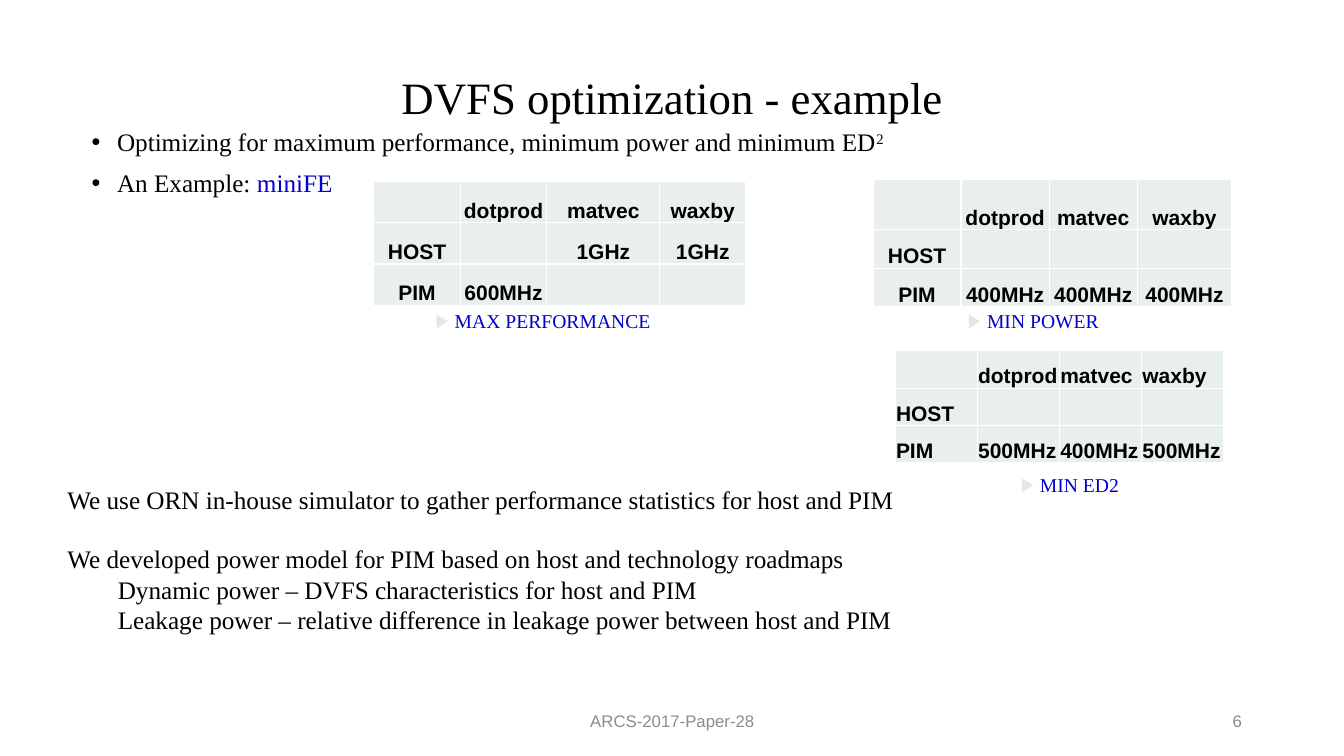
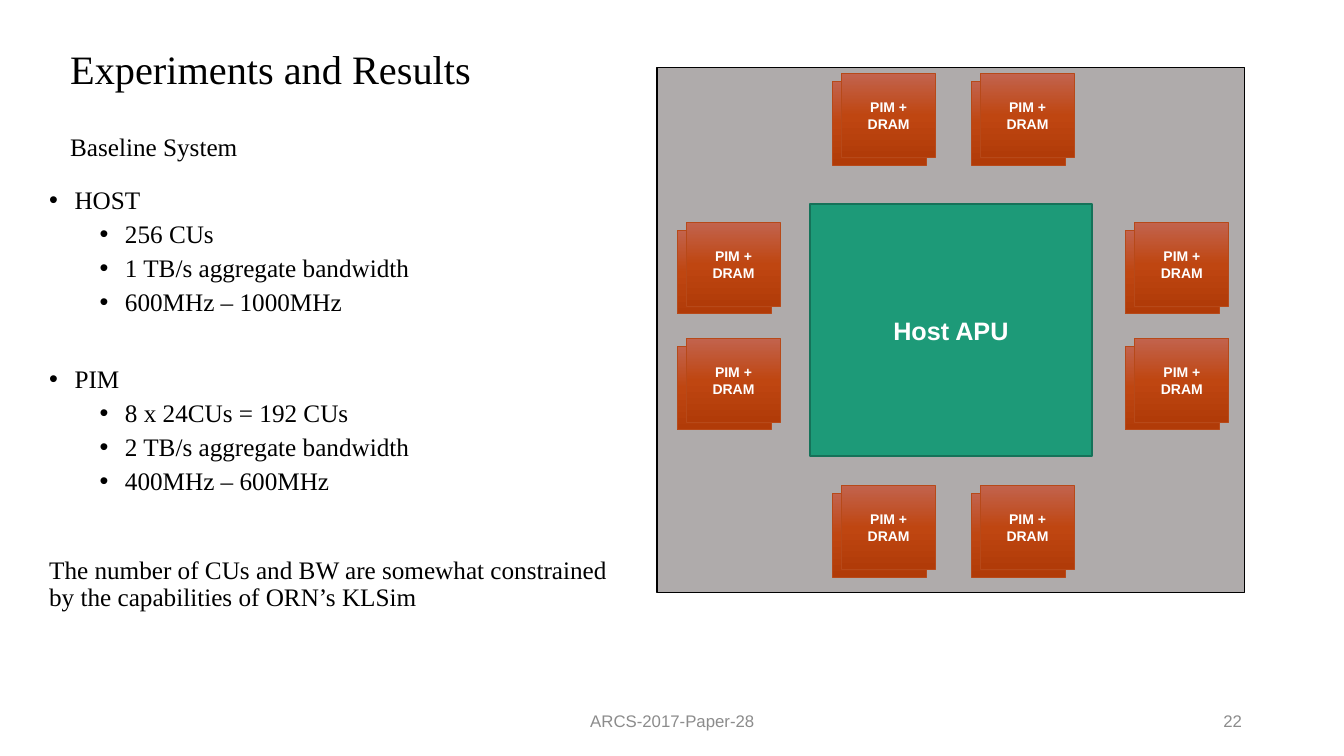
from itertools import product

from pptx import Presentation
from pptx.dml.color import RGBColor
from pptx.enum.shapes import MSO_SHAPE as Shape
from pptx.enum.text import MSO_ANCHOR as Anchor, PP_ALIGN as Align
from pptx.oxml import parse_xml
from pptx.oxml.ns import nsdecls, qn
from pptx.util import Cm, Pt

# Shared look
SERIF, SANS = "Times New Roman", "Arial"
BLACK, WHITE, BLUE, GREY = "000000", "FFFFFF", "0000CC", "8C8C8C"
CELL_FILL, CAPTION_BULLET = "E8EFEC", "E7E6E6"
BOARD_FILL, HOST_FILL, HOST_LINE = "AFABAB", "1D9A78", "157259"
PIM_STOPS, PIM_LINE = [(0, "C2634D"), (50, "BF4611"), (100, "B13B08")], "B74919"
FOOTER = "ARCS-2017-Paper-28"

# Paragraph styles; left and hang are in cm
STYLES = {
    "title": dict(size=32, align=Align.CENTER, line=0.9),
    "left title": dict(size=28.8, line=0.9),
    "subtitle": dict(line=0.9, before=30),
    "bullet": dict(left=0.64, hang=0.64, bullet="•", line=0.9, before=10),
    "next bullet": dict(left=0.64, hang=0.64, bullet="•", line=0.9, before=35),
    "sub-bullet": dict(left=1.91, hang=0.64, bullet="•", line=0.9, before=5),
    "remark": dict(line=0.9, before=44),
    "note": dict(),
    "next note": dict(before=21),
    "indented note": dict(left=1.27),
    "caption": dict(size=14, color=BLUE, align=Align.CENTER, left=0.48, hang=0.48,
                    bullet="▶", bullet_color=CAPTION_BULLET, after=6),
    "footer": dict(size=12, face=SANS, color=GREY, align=Align.CENTER),
    "number": dict(size=12, face=SANS, color=GREY, align=Align.RIGHT),
    "cell": dict(size=15, face=SANS, bold=True),
    "centred cell": dict(size=15, face=SANS, bold=True, align=Align.CENTER),
    "host": dict(face=SANS, color=WHITE, bold=True, align=Align.CENTER),
    "pim": dict(size=10, face=SANS, color=WHITE, bold=True, align=Align.CENTER),
}

# Slide 1 content; a text may be a list of (text, run options)
DVFS_TITLE = [("title", "DVFS optimization - example")]
DVFS_BODY = [
    ("bullet", [("Optimizing for maximum performance, minimum power and minimum ED", {}),
                ("2", {"raised": True})]),
    ("bullet", [("An Example: ", {}), ("miniFE", {"color": BLUE})]),
]
DVFS_NOTES = [
    ("note", "We use ORN in-house simulator to gather performance statistics for host and PIM"),
    ("next note", "We developed power model for PIM based on host and technology roadmaps"),
    ("indented note", "Dynamic power – DVFS characteristics for host and PIM"),
    ("indented note", "Leakage power – relative difference in leakage power between host and PIM"),
]
KERNELS = ["", "dotprod", "matvec", "waxby"]
FREQUENCY_TABLES = [
    dict(at=(9.42, 4.57), columns=[2.18, 2.18, 2.85, 2.16], rows=[1.04] * 3,
         style="centred cell", host=["", "1GHz", "1GHz"], pim=["600MHz", "", ""],
         caption="MAX PERFORMANCE", caption_box=(9.7, 7.65, 7.98, 0.86)),
    dict(at=(22, 4.52), columns=[2.22, 2.22, 2.22, 2.38], rows=[1.27, 0.97, 0.97],
         style="centred cell", host=[""] * 3, pim=["400MHz"] * 3,
         caption="MIN POWER", caption_box=(22.78, 7.65, 6.53, 0.86)),
    dict(at=(22.56, 8.84), columns=[2.07] * 4, rows=[0.94] * 3,
         style="cell", host=[""] * 3, pim=["500MHz", "400MHz", "500MHz"],
         caption="MIN ED2", caption_box=(23.7, 11.79, 6.53, 0.86)),
]

# Slide 2 content
SYSTEM_TITLE = [("left title", "Experiments and Results"), ("subtitle", "Baseline System")]
SYSTEM_BODY = [
    ("bullet", "HOST"),
    ("sub-bullet", "256 CUs"),
    ("sub-bullet", "1 TB/s aggregate bandwidth"),
    ("sub-bullet", "600MHz – 1000MHz"),
    ("next bullet", "PIM"),
    ("sub-bullet", "8 x 24CUs = 192 CUs"),
    ("sub-bullet", "2 TB/s aggregate bandwidth"),
    ("sub-bullet", "400MHz – 600MHz"),
    ("remark", "The number of CUs and BW are somewhat constrained "
               "by the capabilities of ORN’s KLSim"),
]
PIM_TEXT = [("pim", "PIM +"), ("pim", "DRAM")]
BOARD = (16.56, 1.7, 14.81, 13.23)
HOST_SIZE, PIM_SIZE = (7.11, 6.35), (2.37, 2.11)
PIM_SPOTS = [*product((21.21, 24.71), (1.86, 12.24)),   # above and below the host
             *product((17.3, 28.6), (5.61, 8.53))]      # left and right of the host
STACK_SHIFT = (-0.24, 0.19)


def rgb(value):
    return RGBColor.from_string(value)


def color_xml(value):
    return f'<a:solidFill {nsdecls("a")}><a:srgbClr val="{value}"/></a:solidFill>'


def set_bullet(properties, left, hang, bullet, bullet_color):
    properties.set("marL", str(Cm(left)))
    properties.set("indent", str(-Cm(hang)))
    if bullet:
        if bullet_color:
            properties.append(parse_xml(
                f'<a:buClr {nsdecls("a")}><a:srgbClr val="{bullet_color}"/></a:buClr>'))
        properties.append(parse_xml(f'<a:buFont {nsdecls("a")} typeface="{SANS}"/>'))
        properties.append(parse_xml(f'<a:buChar {nsdecls("a")} char="{bullet}"/>'))


def format_paragraph(paragraph, size=18, face=SERIF, color=BLACK, bold=False,
                     align=Align.LEFT, line=None, before=0, after=0,
                     left=0, hang=0, bullet=None, bullet_color=None):
    set_bullet(paragraph._p.get_or_add_pPr(), left, hang, bullet, bullet_color)
    paragraph.alignment = align
    paragraph.line_spacing = line
    paragraph.space_before, paragraph.space_after = Pt(before), Pt(after)
    font = paragraph.font
    font.size, font.name, font.bold = Pt(size), face, bold
    font.color.rgb = rgb(color)


def write(frame, paragraphs, anchor=Anchor.TOP):
    frame.word_wrap = True
    frame.vertical_anchor = anchor
    for index, (style, text) in enumerate(paragraphs):
        paragraph = frame.add_paragraph() if index else frame.paragraphs[0]
        format_paragraph(paragraph, **STYLES[style])
        for words, options in [(text, {})] if isinstance(text, str) else text:
            run = paragraph.add_run()
            run.text = words
            if "color" in options:
                run.font.color.rgb = rgb(options["color"])
            if options.get("raised"):
                run._r.get_or_add_rPr().set("baseline", "30000")


def add_text(slide, box, paragraphs, anchor=Anchor.TOP):
    shape = slide.shapes.add_textbox(*map(Cm, box))
    write(shape.text_frame, paragraphs, anchor)


def add_page(presentation, number):
    slide = presentation.slides.add_slide(presentation.slide_layouts[6])
    add_text(slide, (11.23, 17.65, 11.43, 1.02), [("footer", FOOTER)], Anchor.MIDDLE)
    add_text(slide, (23.93, 17.65, 7.62, 1.02), [("number", str(number))], Anchor.MIDDLE)
    return slide


def format_cell(cell, text, style):
    cell.fill.solid()
    cell.fill.fore_color.rgb = rgb(CELL_FILL)
    cell.margin_left = cell.margin_right = cell.margin_top = Cm(0.02)
    cell.margin_bottom = 0
    cell.vertical_anchor = Anchor.BOTTOM
    paragraph = cell.text_frame.paragraphs[0]
    if text:
        paragraph.add_run().text = text
    format_paragraph(paragraph, **STYLES[style])
    for index, side in enumerate(("lnL", "lnR", "lnT", "lnB")):
        cell._tc.get_or_add_tcPr().insert(index, parse_xml(
            f'<a:{side} {nsdecls("a")} w="{Pt(1)}">{color_xml(WHITE)}</a:{side}>'))


def add_frequency_table(slide, at, columns, rows, style, host, pim, caption, caption_box):
    size = (sum(columns), sum(rows))
    table = slide.shapes.add_table(len(rows), len(columns), *map(Cm, at + size)).table
    table.first_row = table.horz_banding = False
    for column, width in zip(table.columns, columns):
        column.width = Cm(width)
    for row, height, texts in zip(table.rows, rows, [KERNELS, ["HOST", *host], ["PIM", *pim]]):
        row.height = Cm(height)
        for cell, text in zip(row.cells, texts):
            format_cell(cell, text, style)
    add_text(slide, caption_box, [("caption", caption)])


def add_block(slide, box, fill, line, line_width, paragraphs=()):
    """Rectangle with a plain fill, or a vertical gradient when fill is a list of stops."""
    shape = slide.shapes.add_shape(Shape.RECTANGLE, *map(Cm, box))
    shape.shadow.inherit = False
    if isinstance(fill, str):
        shape.fill.solid()
        shape.fill.fore_color.rgb = rgb(fill)
    else:
        stops = "".join(f'<a:gs pos="{position * 1000}"><a:srgbClr val="{color}"/></a:gs>'
                        for position, color in fill)
        shape._element.spPr.find(qn("a:prstGeom")).addnext(parse_xml(
            f'<a:gradFill {nsdecls("a")}><a:gsLst>{stops}</a:gsLst>'
            '<a:lin ang="5400000" scaled="0"/></a:gradFill>'))
    shape.line.color.rgb = rgb(line)
    shape.line.width = Pt(line_width)
    write(shape.text_frame, paragraphs, Anchor.MIDDLE)


def build_dvfs_slide(presentation):
    slide = add_page(presentation, 6)
    add_text(slide, (2.34, 1.02, 29.21, 3), DVFS_TITLE, Anchor.MIDDLE)
    add_text(slide, (2.06, 3.15, 27, 2.16), DVFS_BODY)
    for frequency_table in FREQUENCY_TABLES:
        add_frequency_table(slide, **frequency_table)
    add_text(slide, (1.45, 12.07, 22.48, 4.11), DVFS_NOTES)


def build_system_slide(presentation):
    slide = add_page(presentation, 22)
    add_text(slide, (1.52, 1.07, 16.41, 3.18), SYSTEM_TITLE, Anchor.MIDDLE)
    add_text(slide, (0.99, 4.6, 14.71, 11.68), SYSTEM_BODY)

    # Board with stacked memory around a centred host
    add_block(slide, BOARD, BOARD_FILL, BLACK, 1)
    for left, top in PIM_SPOTS:
        behind = (left + STACK_SHIFT[0], top + STACK_SHIFT[1])
        add_block(slide, behind + PIM_SIZE, PIM_STOPS, PIM_LINE, 0.5)
        add_block(slide, (left, top) + PIM_SIZE, PIM_STOPS, PIM_LINE, 0.5, PIM_TEXT)
    left, top, width, height = BOARD
    corner = (left + (width - HOST_SIZE[0]) / 2, top + (height - HOST_SIZE[1]) / 2)
    add_block(slide, corner + HOST_SIZE, HOST_FILL, HOST_LINE, 1, [("host", "Host APU")])


def main():
    presentation = Presentation()
    presentation.slide_width, presentation.slide_height = Cm(33.87), Cm(19.05)
    build_dvfs_slide(presentation)
    build_system_slide(presentation)
    presentation.save("out.pptx")


if __name__ == "__main__":
    main()
